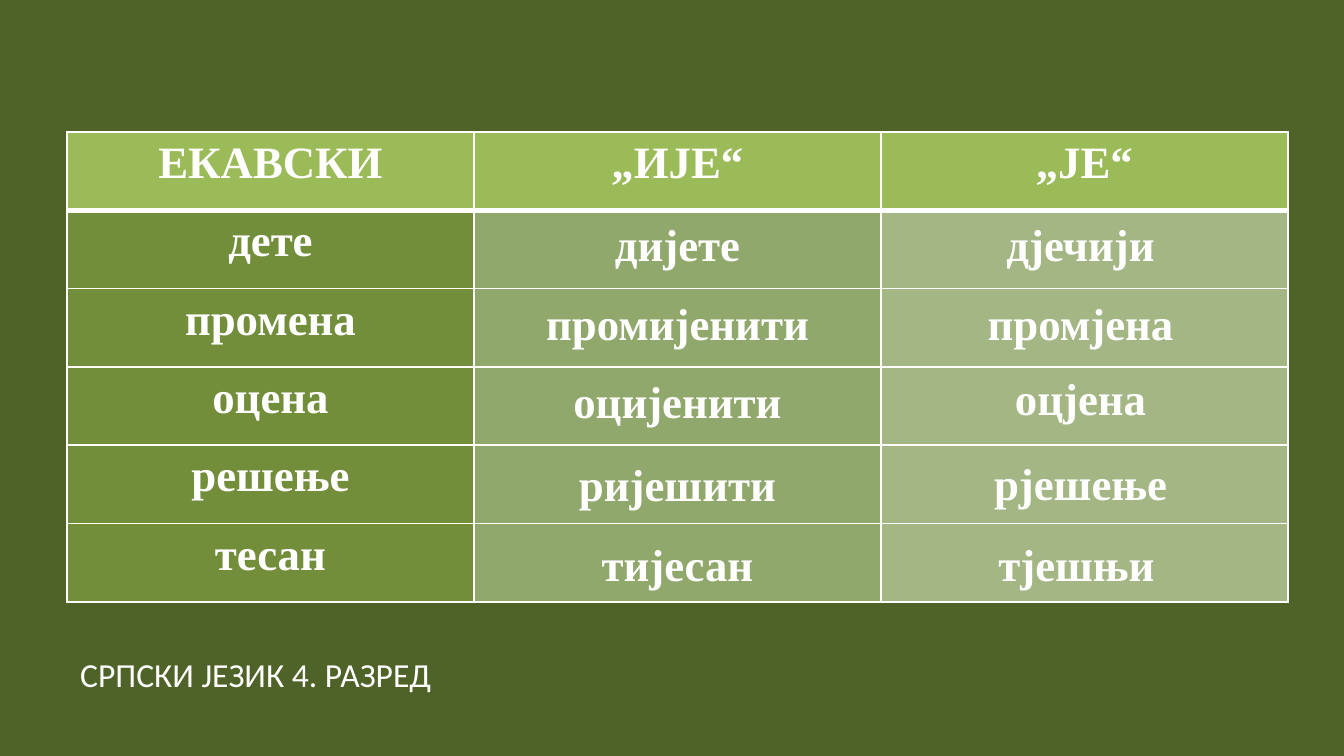
from lxml.etree import SubElement as add_element
from pptx import Presentation
from pptx.dml.color import RGBColor
from pptx.enum.text import MSO_AUTO_SIZE as AutoSize, PP_ALIGN as Align
from pptx.oxml.ns import qn
from pptx.util import Emu, Pt

EMU_PER_PX = 914400 / 134.4
WHITE, BACKGROUND, HEADER = "FFFFFF", "4F6228", "9BBB59"
COLUMN_FILLS = ["728E3A", "91A86C", "A3B684"]
HEADINGS = ["ЕКАВСКИ", "„ИЈЕ“", "„ЈЕ“"]
EKAVIAN_WORDS = ["дете", "промена", "оцена", "решење", "тесан"]
IJEKAVIAN_WORDS = [
    ("дијете", 521, 210, 313),
    ("дјечији", 963, 210, 235),
    ("промијенити", 521, 289, 313),
    ("промјена", 963, 289, 235),
    ("оцијенити", 543, 367, 269),
    ("оцјена", 924, 364, 313),
    ("ријешити", 532, 450, 291),
    ("рјешење", 924, 449, 313),
    ("тијесан", 521, 530, 313),
    ("тјешњи", 920, 530, 313),
]


def px(length):
    return Emu(round(length * EMU_PER_PX))


def color(value):
    return RGBColor.from_string(value)


class SlideBuilder:
    """Holds the text style and the current slide, and adds its elements."""

    def __init__(self, slide):
        self.slide = slide
        self.word_style = {"name": "Times New Roman", "size": 24, "bold": True}
        self.footer_style = {"name": "Calibri", "size": 18, "bold": False}

    def background(self, value):
        fill = self.slide.background.fill
        fill.solid()
        fill.fore_color.rgb = color(value)

    def fill_text(self, text_frame, text, style, align):
        text_frame.text = text
        paragraph = text_frame.paragraphs[0]
        paragraph.alignment = align
        for run in paragraph.runs:
            run.font.name = style["name"]
            run.font.size = Pt(style["size"])
            run.font.bold = style["bold"]
            run.font.color.rgb = color(WHITE)

    def text(self, text, left, top, width, height, style, align):
        box = self.slide.shapes.add_textbox(px(left), px(top), px(width), px(height))
        box.text_frame.word_wrap = True
        box.text_frame.auto_size = AutoSize.SHAPE_TO_FIT_TEXT
        self.fill_text(box.text_frame, text, style, align)

    def word(self, text, left, top, width):
        self.text(text, left, top, width, 67, self.word_style, Align.CENTER)

    def footer(self, text, left, top, width, height):
        self.text(text, left, top, width, height, self.footer_style, Align.LEFT)

    def borders(self, cell, top, bottom):
        properties = cell._tc.get_or_add_tcPr()
        widths = {"a:lnL": 1, "a:lnR": 1, "a:lnT": top, "a:lnB": bottom}
        for index, (tag, width) in enumerate(widths.items()):
            line = add_element(properties, qn(tag), w=str(Pt(width)))
            fill = add_element(line, qn("a:solidFill"))
            add_element(fill, qn("a:srgbClr"), val=WHITE)
            properties.insert(index, line)

    def table(self, rows, left, top, width, height):
        frame = self.slide.shapes.add_table(
            len(rows), len(rows[0]), px(left), px(top), px(width), px(height)
        )
        for row_index, row in enumerate(rows):
            for column_index, text in enumerate(row):
                cell = frame.table.cell(row_index, column_index)
                fill = COLUMN_FILLS[column_index] if row_index else HEADER
                cell.fill.solid()
                cell.fill.fore_color.rgb = color(fill)
                self.borders(
                    cell,
                    top=3 if row_index == 1 else 1,
                    bottom=3 if row_index == 0 else 1,
                )
                if text:
                    self.fill_text(
                        cell.text_frame, text, self.word_style, Align.CENTER
                    )


def main():
    presentation = Presentation()
    presentation.slide_width = px(1344)
    presentation.slide_height = px(756)
    blank_layout = presentation.slide_layouts[6]
    builder = SlideBuilder(presentation.slides.add_slide(blank_layout))

    builder.background(BACKGROUND)
    rows = [HEADINGS] + [[word, "", ""] for word in EKAVIAN_WORDS]
    builder.table(rows, 67, 132, 1221, 470)
    for word, left, top, width in IJEKAVIAN_WORDS:
        builder.word(word, left, top, width)
    builder.footer("СРПСКИ ЈЕЗИК 4. РАЗРЕД", 67, 647, 571, 54)

    presentation.save("out.pptx")


if __name__ == "__main__":
    main()
